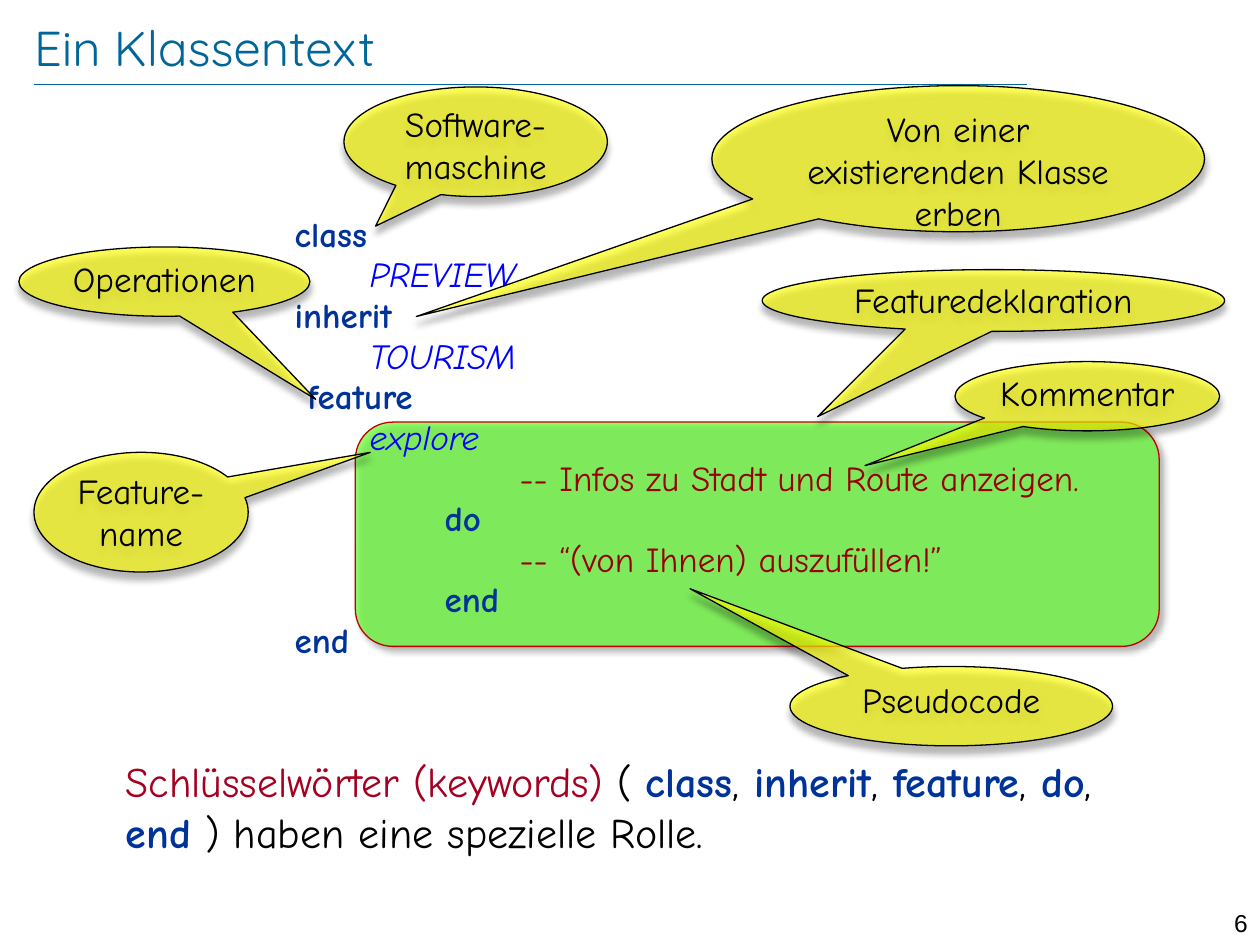
from lxml import etree
from pptx import Presentation
from pptx.dml.color import RGBColor
from pptx.enum.shapes import MSO_CONNECTOR, MSO_SHAPE
from pptx.enum.text import MSO_ANCHOR, PP_ALIGN
from pptx.oxml.ns import qn
from pptx.util import Inches, Pt

STRAIGHT = MSO_CONNECTOR.STRAIGHT
CALLOUT = MSO_SHAPE.OVAL_CALLOUT
ROUNDED = MSO_SHAPE.FLOWCHART_ALTERNATE_PROCESS
TOP, MIDDLE = MSO_ANCHOR.TOP, MSO_ANCHOR.MIDDLE
LEFT, CENTER, RIGHT = PP_ALIGN.LEFT, PP_ALIGN.CENTER, PP_ALIGN.RIGHT

COLUMNS, ROWS = 100, 75
WIDTH, HEIGHT = Inches(10), Inches(7.5)
TAB_STEP = 5.95

TEAL, BLACK, RED = "006699", "000000", "C00000"
YELLOW, GREEN = "FFFF00", "66FF33"
BODY_FONT = "Comic Neue"

SPAN_STYLES = {
    "keyword": ("003399", True, False),
    "name": ("0000FF", False, True),
    "comment": ("990000", False, False),
    "term": ("A50021", False, False),
    "plain": (BLACK, False, False),
}

CODE = [
    ("keyword", "class"),
    ("name", "\tPREVIEW"),
    ("keyword", "inherit"),
    ("name", "\tTOURISM"),
    ("keyword", " feature"),
    ("name", "\texplore"),
    ("comment", "\t\t\t-- Infos zu Stadt und Route anzeigen."),
    ("keyword", "\t\tdo"),
    ("comment", "\t\t\t-- “(von Ihnen) auszufüllen!”"),
    ("keyword", "\t\tend"),
    ("keyword", "end"),
]

SUMMARY = [
    ("term", "Schlüsselwörter (keywords) "), ("plain", "( "),
    ("keyword", "class"), ("plain", ","),
    ("keyword", " inherit"), ("plain", ","),
    ("keyword", " feature"), ("plain", ","),
    ("keyword", " do"), ("plain", ", "),
    ("keyword", "end"), ("plain", " ) haben eine spezielle Rolle."),
]

CALLOUTS = [
    ("Software-maschine", (27.3, 6.9, 20.9, 8.7), (-0.38, 0.77)),
    ("Von einer existierenden Klasse erben", (56.5, 6.8, 39.1, 11.6), (-1.1, 1.08)),
    ("Operationen", (1.5, 19.6, 23.1, 5.5), (0.52, 1.7)),
    ("Feature-name", (2.7, 35.9, 17, 9.5), (1.07, -0.5)),
    ("Kommentar", (75.8, 28.7, 21, 5.5), (-0.84, 1)),
    ("Featuredeklaration", (60.5, 21.4, 36.7, 4.9), (-0.38, 1.88)),
    ("Pseudocode", (62.7, 52.9, 25.6, 6.3), (-0.81, -1.48)),
]


def color(value):
    return RGBColor.from_string(value)


def across(columns):
    return round(WIDTH * columns / COLUMNS)


def down(rows):
    return round(HEIGHT * rows / ROWS)


class SlideBuilder:
    def __init__(self, page):
        self.page = page

    def place(self, area):
        left, top, width, height = area
        return across(left), down(top), across(width), down(height)

    def line(self, start, end, line_color, width):
        rule = self.page.shapes.add_connector(
            STRAIGHT, across(start[0]), down(start[1]), across(end[0]), down(end[1]))
        rule.line.color.rgb = color(line_color)
        rule.line.width = Pt(width)
        etree.SubElement(rule.element.spPr, qn("a:effectLst"))

    def frame(self, box, anchor=TOP, inset=None):
        frame = box.text_frame
        frame.word_wrap = True
        frame.vertical_anchor = anchor
        if inset is not None:
            frame.margin_left = frame.margin_right = inset
            frame.margin_top = frame.margin_bottom = inset
        return frame

    def set_font(self, para, font, size, align=LEFT):
        para.alignment = align
        para.font.name = font
        para.font.size = Pt(size)

    def style_span(self, font, style):
        shade, font.bold, font.italic = SPAN_STYLES[style]
        font.color.rgb = color(shade)

    def label(self, area, text, font, size, shade, align=LEFT, anchor=TOP, inset=None):
        box = self.page.shapes.add_textbox(*self.place(area))
        para = self.frame(box, anchor, inset).paragraphs[0]
        para.text = text
        self.set_font(para, font, size, align)
        para.font.color.rgb = color(shade)

    def shape(self, kind, area, fill, opacity, line_color, shadow):
        shape = self.page.shapes.add_shape(kind, *self.place(area))
        shape.shadow.inherit = False
        shape.fill.solid()
        shape.fill.fore_color.rgb = color(fill)
        shape.line.color.rgb = color(line_color)
        shape.line.width = Pt(0.75)
        properties = shape.element.spPr
        tint = properties.find(qn("a:solidFill")).find(qn("a:srgbClr"))
        self.add_alpha(tint, opacity)
        self.add_shadow(properties.find(qn("a:effectLst")), *shadow)
        return shape

    def add_alpha(self, tint, percent):
        etree.SubElement(tint, qn("a:alpha"), val=str(percent * 1000))

    def add_shadow(self, effects, opacity, blur, distance, angle):
        shadow = etree.SubElement(
            effects, qn("a:outerShdw"), blurRad=str(Pt(blur)), dist=str(Pt(distance)),
            dir=str(angle * 60000), rotWithShape="0")
        tint = etree.SubElement(shadow, qn("a:srgbClr"), val=BLACK)
        self.add_alpha(tint, opacity)

    def callout(self, text, area, tip):
        shape = self.shape(CALLOUT, area, YELLOW, 64, BLACK, (43, 4, 4, 90))
        shape.adjustments[0], shape.adjustments[1] = tip
        para = self.frame(shape, TOP, 0).paragraphs[0]
        para.text = text
        self.set_font(para, BODY_FONT, 20, CENTER)
        para.font.color.rgb = color(BLACK)

    def code(self, area, lines):
        frame = self.frame(self.page.shapes.add_textbox(*self.place(area)))
        for index, (style, text) in enumerate(lines):
            para = frame.add_paragraph() if index else frame.paragraphs[0]
            para.line_spacing = 0.8
            if index:
                para.space_before = Pt(4)
            stops = etree.SubElement(para._p.get_or_add_pPr(), qn("a:tabLst"))
            for step in range(1, 4):
                etree.SubElement(stops, qn("a:tab"), pos=str(across(step * TAB_STEP)), algn="l")
            para.add_run().text = text
            self.set_font(para, BODY_FONT, 20)
            self.style_span(para.font, style)

    def rich_text(self, area, spans, size):
        box = self.page.shapes.add_textbox(*self.place(area))
        para = self.frame(box).paragraphs[0]
        self.set_font(para, BODY_FONT, size)
        for style, text in spans:
            span = para.add_run()
            span.text = text
            self.style_span(span.font, style)


def main():
    deck = Presentation()
    deck.slide_width, deck.slide_height = WIDTH, HEIGHT
    builder = SlideBuilder(deck.slides.add_slide(deck.slide_layouts[6]))

    builder.line((2.7, 6.7), (81.5, 6.7), TEAL, 0.25)
    builder.label((2.7, 1.3, 86.9, 4.8), "Ein Klassentext", "Quicksand", 28, TEAL,
                  anchor=MIDDLE, inset=0)
    builder.label((94.5, 71.6, 5.5, 2.4), "6", "Arial", 14, BLACK, align=RIGHT)
    builder.shape(ROUNDED, (28.2, 33.5, 63.8, 17.8), GREEN, 70, RED, (40, 4, 3, 45))
    builder.code((22.4, 17, 74.4, 35.4), CODE)
    for text, area, tip in CALLOUTS:
        builder.callout(text, area, tip)
    builder.rich_text((9, 59.5, 81.2, 9.1), SUMMARY, 24)

    deck.save("out.pptx")


if __name__ == "__main__":
    main()
